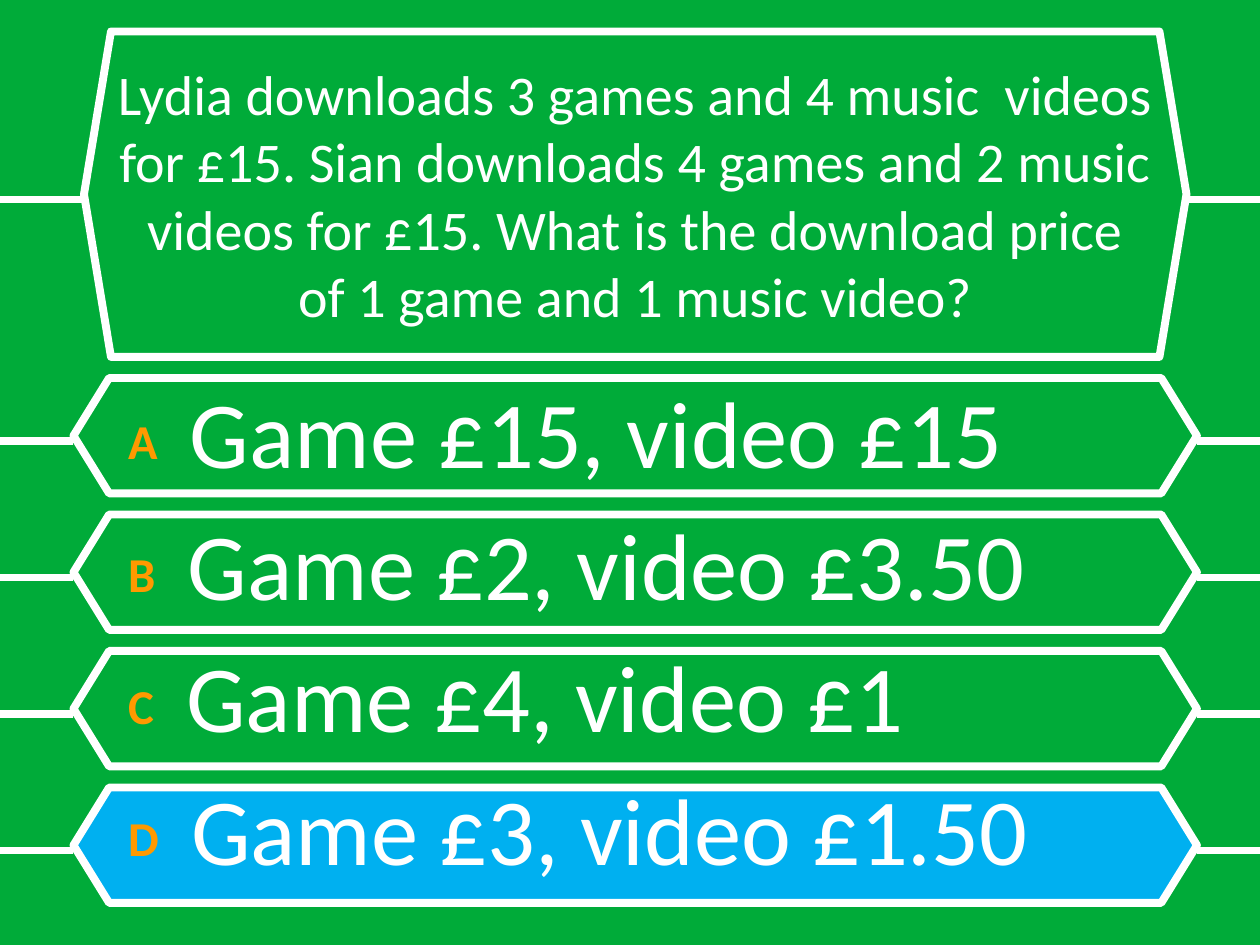
from pptx import Presentation
from pptx.dml.color import RGBColor
from pptx.enum.shapes import MSO_CONNECTOR, MSO_SHAPE
from pptx.enum.text import MSO_ANCHOR, MSO_AUTO_SIZE, PP_ALIGN
from pptx.oxml.ns import qn
from pptx.util import Inches, Pt
from lxml.etree import SubElement

COLORS = {"green": "00AB39", "blue": "00B0F0", "white": "FFFFFF",
          "orange": "FF9900", "black": "000000"}
FONT = "Calibri"
COLUMNS, ROWS = 120, 90  # grid cells of 1/12 inch

QUESTION = ("Lydia downloads 3 games and 4 music  videos for £15. "
            "Sian downloads 4 games and 2 music videos for £15. "
            "What is the download price of 1 game and 1 music video?")
ANSWERS = {"A": "Game £15, video £15", "B": "Game £2, video £3.50",
           "C": "Game £4, video £1", "D": "Game £3, video £1.50"}
CORRECT = "D"


class QuizSlide:
    def __init__(self, deck):
        self.deck = deck
        self.slide = deck.slides.add_slide(deck.slide_layouts[1])
        background = self.slide.background.fill
        background.solid()
        background.fore_color.rgb = self.color("green")

    def color(self, name):
        return RGBColor.from_string(COLORS[name])

    def grid(self, column, row):
        return (round(column * self.deck.slide_width / COLUMNS),
                round(row * self.deck.slide_height / ROWS))

    def outline(self, line):
        line.color.rgb = self.color("white")
        line.width = Pt(4.5)

    def hexagon(self, column, row, columns, rows, point, fill=None):
        box = self.slide.shapes.add_shape(
            MSO_SHAPE.HEXAGON, *self.grid(column, row), *self.grid(columns, rows))
        box.adjustments[0] = point
        box.shadow.inherit = False
        if fill:
            box.fill.solid()
            box.fill.fore_color.rgb = self.color(fill)
        else:
            box.fill.background()
        self.outline(box.line)

    def side_lines(self, left, right, row):
        for start, end in ((left, 0), (COLUMNS, right)):
            line = self.slide.shapes.add_connector(
                MSO_CONNECTOR.STRAIGHT, *self.grid(start, row), *self.grid(end, row))
            self.outline(line.line)
            SubElement(line.element.spPr, qn("a:effectLst"))

    def place(self, box, column, row, columns, rows):
        box.left, box.top = self.grid(column, row)
        box.width, box.height = self.grid(columns, rows)
        box.text_frame.word_wrap = True
        box.text_frame.auto_size = MSO_AUTO_SIZE.NONE
        self.slide.shapes.element.append(box.element)  # bring to front
        return box.text_frame

    def span(self, para, text, size, color, bold=False, raised=None):
        span = para.add_run()
        span.text = text
        span.font.name = FONT
        span.font.size = Pt(size)
        span.font.bold = bold
        span.font.color.rgb = self.color(color)
        if raised:
            span.font._element.set("baseline", str(raised * 1000))

    def question(self, text, *area):
        frame = self.place(self.slide.shapes.title, *area)
        frame.vertical_anchor = MSO_ANCHOR.MIDDLE
        para = frame.paragraphs[0]
        para.alignment = PP_ALIGN.CENTER
        self.span(para, text, 32, "white")

    def answers(self, answers, *area):
        frame = self.place(self.slide.placeholders[1], *area)
        frame.vertical_anchor = MSO_ANCHOR.TOP
        for index, (letter, text) in enumerate(answers.items()):
            para = frame.add_paragraph() if index else frame.paragraphs[0]
            para.alignment = PP_ALIGN.LEFT
            # Hanging indent, spacing of 20 % and no bullet
            settings = para._p.get_or_add_pPr()
            settings.set("marL", str(Inches(0.38)))
            settings.set("indent", str(-Inches(0.38)))
            before = SubElement(settings, qn("a:spcBef"))
            SubElement(before, qn("a:spcPct")).set("val", "20000")
            SubElement(settings, qn("a:buNone"))
            self.span(para, letter + " ", 48, "orange", bold=True, raised=10)
            self.span(para, " ", 54, "black")
            self.span(para, text, 54, "white")


def main():
    deck = Presentation()
    deck.slide_width, deck.slide_height = Inches(10), Inches(7.5)
    quiz = QuizSlide(deck)

    # Question frame
    quiz.hexagon(8, 3, 105, 31, 0.083)
    quiz.side_lines(8, 113, 19)

    # Answer frames, the correct one filled
    for index, letter in enumerate(ANSWERS):
        row = 36 + 13 * index
        quiz.hexagon(7, row, 107, 11, 0.309, "blue" if letter == CORRECT else None)
        quiz.side_lines(7, 114, row + 6)

    # Texts
    quiz.question(QUESTION, 10, 5, 101, 27)
    quiz.answers(ANSWERS, 11, 35, 100, 52)

    deck.save("out.pptx")


if __name__ == "__main__":
    main()
